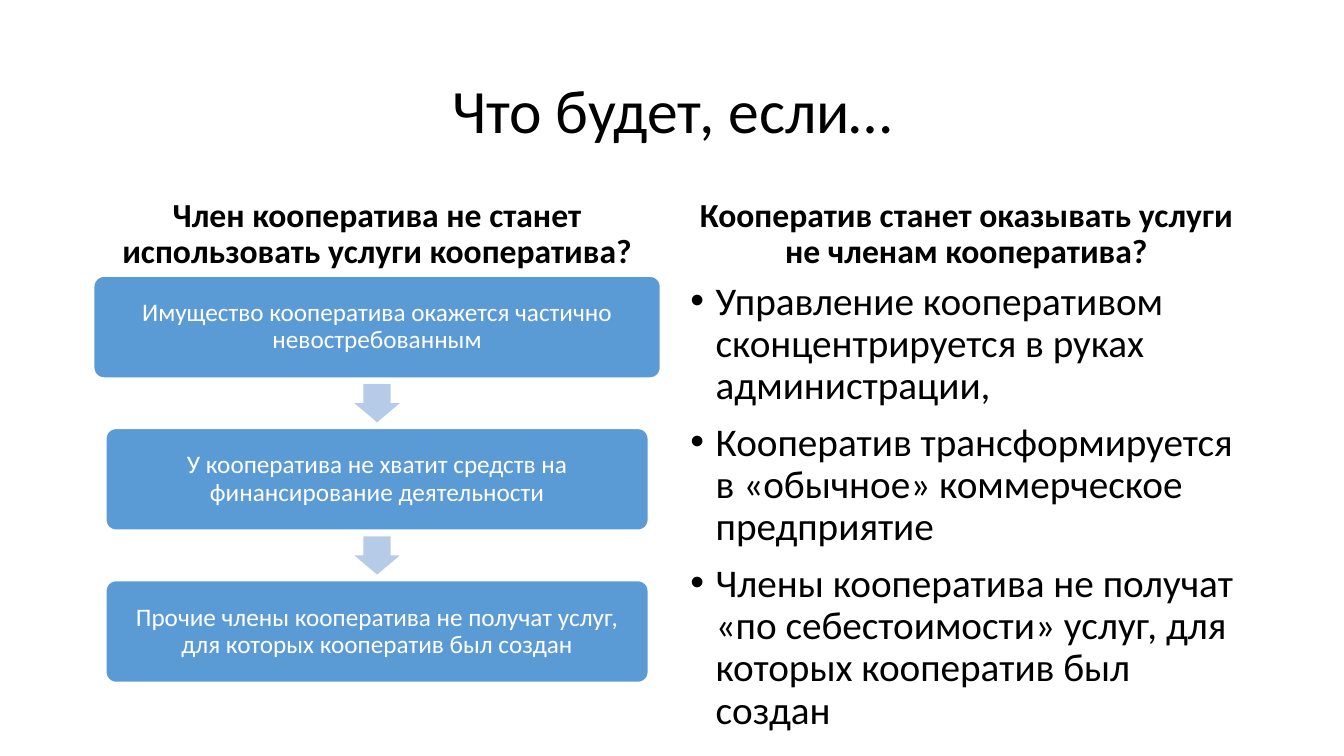
from lxml.etree import SubElement
from pptx import Presentation
from pptx.dml.color import RGBColor
from pptx.enum.shapes import MSO_SHAPE
from pptx.enum.text import MSO_ANCHOR, PP_ALIGN
from pptx.oxml.ns import qn
from pptx.util import Inches, Pt

BLACK = RGBColor(0x00, 0x00, 0x00)
WHITE = RGBColor(0xFF, 0xFF, 0xFF)
STEP_BLUE = RGBColor(0x5B, 0x9B, 0xD5)
ARROW_BLUE = RGBColor(0xB5, 0xCB, 0xE7)

TITLE = "Что будет, если…"
LEFT_HEADING = "Член кооператива не станет использовать услуги кооператива?"
RIGHT_HEADING = "Кооператив станет оказывать услуги не членам кооператива?"
STEPS = [
    "Имущество кооператива окажется частично невостребованным",
    "У кооператива не хватит средств на финансирование деятельности",
    "Прочие члены кооператива не получат услуг, для которых кооператив был создан",
]
CONSEQUENCES = [
    "Управление кооперативом сконцентрируется в руках администрации,",
    "Кооператив трансформируется в «обычное» коммерческое предприятие",
    "Члены кооператива не получат «по себестоимости» услуг, для которых кооператив был создан",
]

FLOW_CENTER = 3.74
FLOW_TOP = 2.74
STEP_PITCH = 1.51
STEP_HEIGHT = 1.01
STEP_WIDTHS = [5.62, 5.38, 5.38]
ARROW_LENGTH = 0.38
ARROW_BREADTH = 0.45


def write_text(frame, paragraphs, size=18, color=BLACK, bold=False, before=0,
               align=PP_ALIGN.CENTER, anchor=MSO_ANCHOR.MIDDLE, bullet=None):
    """Fill a text frame with formatted paragraphs."""
    frame.word_wrap = True
    frame.vertical_anchor = anchor
    for index, text in enumerate(paragraphs):
        paragraph = frame.paragraphs[0] if index == 0 else frame.add_paragraph()
        paragraph.alignment = align
        paragraph.line_spacing = 0.9
        paragraph.space_before = Pt(before)
        run = paragraph.add_run()
        run.text = text
        run.font.name = "Calibri"
        run.font.size = Pt(size)
        run.font.bold = bold
        run.font.color.rgb = color
        if bullet:
            properties = paragraph._p.get_or_add_pPr()
            properties.set("marL", str(Inches(0.25)))
            properties.set("indent", str(-Inches(0.25)))
            SubElement(properties, qn("a:buFont"), typeface="Arial")
            SubElement(properties, qn("a:buChar"), char=bullet)


class SlideBuilder:
    """Add styled elements to one slide."""

    def __init__(self, slide):
        self.slide = slide

    def text(self, left, top, width, height, paragraphs, **style):
        """Add a text box."""
        box = self.slide.shapes.add_textbox(
            Inches(left), Inches(top), Inches(width), Inches(height))
        write_text(box.text_frame, paragraphs, **style)

    def heading(self, left, width, text):
        """Add a bold column heading."""
        self.text(left, 1.84, width, 0.9, [text], size=24, bold=True,
                  before=10, anchor=MSO_ANCHOR.BOTTOM)

    def shape(self, kind, left, top, width, height, fill, adjustments):
        """Add a filled preset shape without outline or shadow."""
        shape = self.slide.shapes.add_shape(
            kind, Inches(left), Inches(top), Inches(width), Inches(height))
        shape.shadow.inherit = False
        shape.fill.solid()
        shape.fill.fore_color.rgb = fill
        shape.line.fill.background()
        for index, value in enumerate(adjustments):
            shape.adjustments[index] = value
        return shape

    def step(self, top, width, text):
        """Add a centred step of the flow."""
        shape = self.shape(MSO_SHAPE.ROUNDED_RECTANGLE, FLOW_CENTER - width / 2,
                           top, width, STEP_HEIGHT, STEP_BLUE, [0.1])
        shape.line.color.rgb = WHITE
        shape.line.width = Pt(1)
        frame = shape.text_frame
        frame.margin_left = frame.margin_right = Inches(0.1)
        frame.margin_top = frame.margin_bottom = Inches(0.1)
        write_text(frame, [text], color=WHITE)

    def arrow(self, center):
        """Add a downward arrow between two steps."""
        shape = self.shape(MSO_SHAPE.RIGHT_ARROW, FLOW_CENTER - ARROW_LENGTH / 2,
                           center - ARROW_BREADTH / 2, ARROW_LENGTH,
                           ARROW_BREADTH, ARROW_BLUE, [0.6, 0.5])
        shape.rotation = 90


def main():
    """Build and save the slide."""
    presentation = Presentation()
    presentation.slide_width = Inches(13.33)
    presentation.slide_height = Inches(7.5)
    slide = presentation.slides.add_slide(presentation.slide_layouts[6])
    builder = SlideBuilder(slide)

    builder.text(0.92, 0.4, 11.5, 1.45, [TITLE], size=44)
    builder.heading(0.92, 5.64, LEFT_HEADING)
    for index, (text, width) in enumerate(zip(STEPS, STEP_WIDTHS)):
        top = FLOW_TOP + index * STEP_PITCH
        if index:
            builder.arrow(top - (STEP_PITCH - STEP_HEIGHT) / 2)
        builder.step(top, width, text)

    builder.heading(6.75, 5.67, RIGHT_HEADING)
    builder.text(6.75, 2.74, 5.67, 4.03, CONSEQUENCES, size=28, before=10,
                 align=PP_ALIGN.LEFT, anchor=MSO_ANCHOR.TOP, bullet="•")
    presentation.save("out.pptx")


if __name__ == "__main__":
    main()
